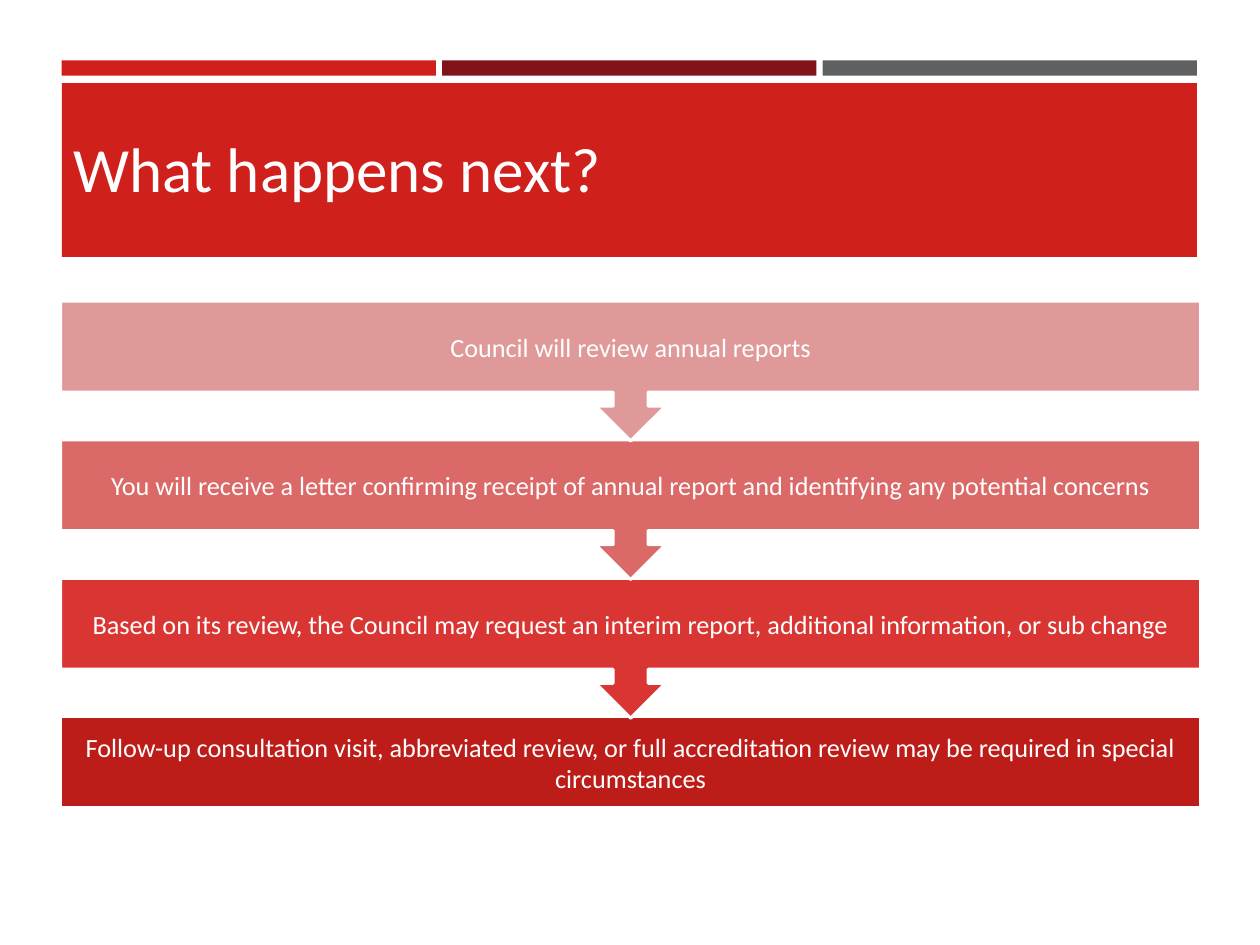
"""Build the "What happens next?" slide with its four-step review process."""
from pptx import Presentation
from pptx.dml.color import RGBColor
from pptx.enum.shapes import MSO_SHAPE as Shape
from pptx.enum.text import MSO_ANCHOR as Anchor, MSO_AUTO_SIZE as AutoSize, PP_ALIGN as Align
from pptx.util import Inches, Pt

COLORS = {
    "red": "D0201C", "maroon": "811419", "gray": "5F6062",
    "title": "FFFEFF", "white": "FFFFFF",
    "step1": "DF9999", "step2": "DA6968", "step3": "D93633", "step4": "BD1D19",
}
STEPS = [
    "Council will review annual reports",
    "You will receive a letter confirming receipt of annual report and identifying any potential concerns",
    "Based on its review, the Council may request an interim report, additional information, or sub change",
    "Follow-up consultation visit, abbreviated review, or full accreditation review may be required in special circumstances",
]
STEP_LEFT, STEP_TOP, STEP_WIDTH, STEP_PITCH = 0.48, 2.39, 9.05, 1.1
BODY_HEIGHT, CALLOUT_HEIGHT = 0.72, 1.11


def add_block(kind, left, top, width, height, color):
    block = page.shapes.add_shape(kind, Inches(left), Inches(top), Inches(width), Inches(height))
    block.shadow.inherit = False
    block.fill.solid()
    block.fill.fore_color.rgb = RGBColor.from_string(COLORS[color])
    block.line.fill.background()
    return block


def write_text(box, text, align, size, color, margins):
    frame = box.text_frame
    frame.text = text
    frame_format = {"word_wrap": True, "auto_size": AutoSize.NONE, "vertical_anchor": Anchor.MIDDLE, **margins}
    for name, value in frame_format.items():
        setattr(frame, name, value)
    para = frame.paragraphs[0]
    para.alignment = align
    span = para.runs[0]
    for name, value in {"name": "Calibri", "size": Pt(size), "bold": False}.items():
        setattr(span.font, name, value)
    span.font.color.rgb = RGBColor.from_string(COLORS[color])


deck = Presentation()
deck.slide_width, deck.slide_height = Inches(10), Inches(7.5)
page = deck.slides.add_slide(deck.slide_layouts[5])

for index, color in enumerate(["red", "maroon", "gray"]):
    add_block(Shape.RECTANGLE, 0.49 + index * 3.02, 0.48, 2.97, 0.12, color)
panel = add_block(Shape.RECTANGLE, 0.49, 0.66, 9.01, 1.38, "red")

title = page.shapes.title
title.left, title.top, title.width, title.height = Inches(0.48), Inches(0.77), Inches(9.05), Inches(1.11)
write_text(title, "What happens next?", Align.LEFT, 36, "title", {})
panel.element.addnext(title.element)

step_margins = {f"margin_{side}": Inches(0.12) for side in ("left", "top", "right", "bottom")}
for index, text in reversed(list(enumerate(STEPS))):
    top = STEP_TOP + index * STEP_PITCH
    is_last = index == len(STEPS) - 1
    kind = Shape.RECTANGLE if is_last else Shape.UP_ARROW_CALLOUT
    height = BODY_HEIGHT if is_last else CALLOUT_HEIGHT
    step = add_block(kind, STEP_LEFT, top, STEP_WIDTH, height, f"step{index + 1}")
    step.rotation = 0 if is_last else 180
    step.line.color.rgb = RGBColor.from_string(COLORS["white"])
    step.line.width = Pt(1.75)
    label = page.shapes.add_textbox(Inches(STEP_LEFT), Inches(top), Inches(STEP_WIDTH), Inches(BODY_HEIGHT))
    write_text(label, text, Align.CENTER, 15, "white", step_margins)

deck.save("out.pptx")
